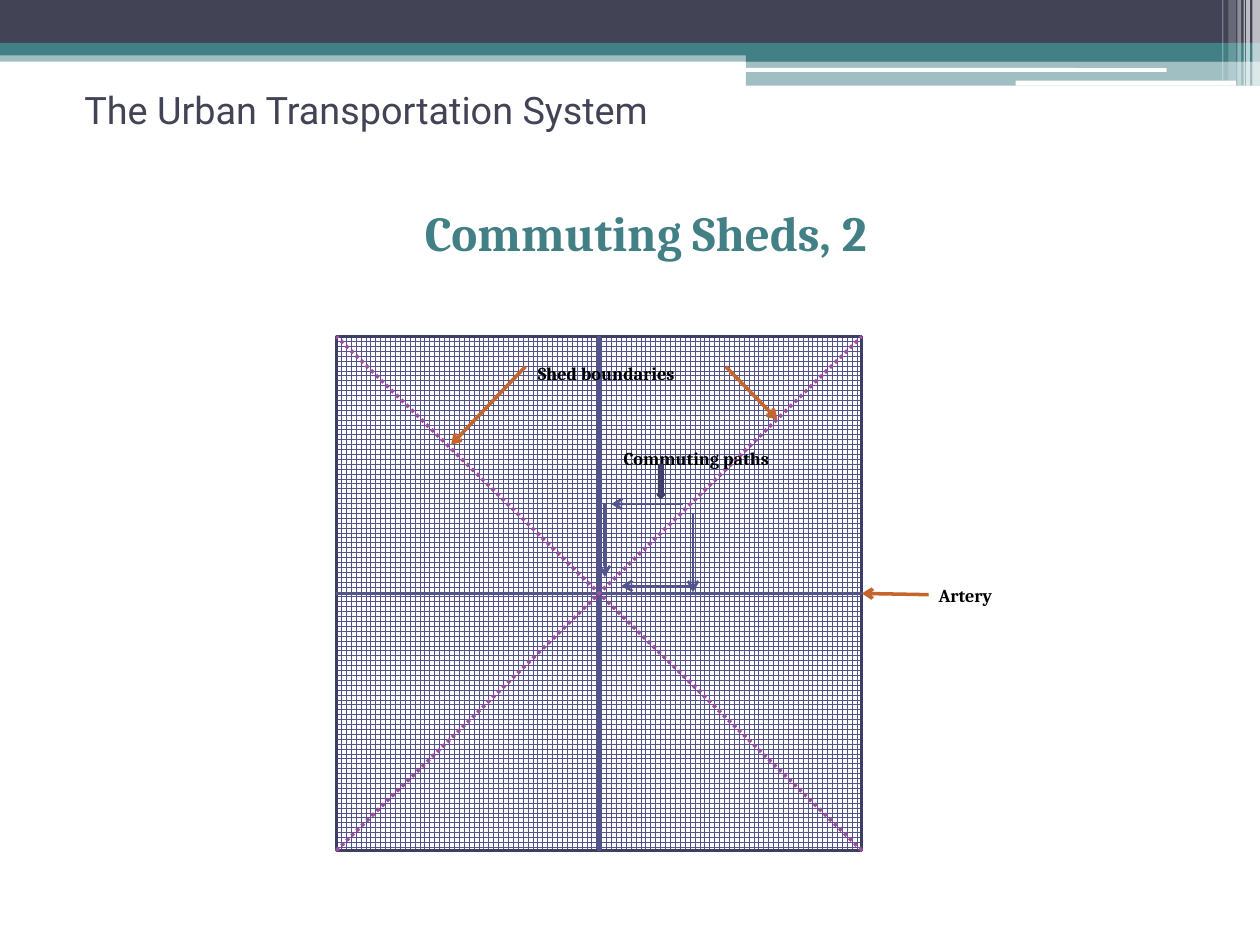
from pptx import Presentation
from pptx.dml.color import RGBColor
from pptx.enum.dml import MSO_LINE, MSO_PATTERN
from pptx.enum.shapes import MSO_CONNECTOR, MSO_SHAPE
from pptx.enum.text import MSO_ANCHOR, MSO_AUTO_SIZE, PP_ALIGN
from pptx.oxml.ns import qn
from pptx.util import Inches, Pt
from lxml import etree

RECT, ROUND, DOWN = MSO_SHAPE.RECTANGLE, MSO_SHAPE.ROUNDED_RECTANGLE, MSO_SHAPE.DOWN_ARROW
TOP, LEFT, BOTTOM, RIGHT = range(4)
SLATE, TEAL, WHITE, BLACK = "424456", "438086", "FFFFFF", "000000"
INDIGO, NAVY, PURPLE, ORANGE = "53548A", "3D3E66", "A04DA3", "C4652D"

# Header: kind, (left, top, width, height), colour, opacity in percent
HEADER = [
    (RECT, (0, 0.4, 10, 0.09), TEAL, 50),
    (RECT, (0, 0, 10, 0.34), SLATE, 100),
    (RECT, (0, 0.34, 10, 0.1), TEAL, 100),
    (RECT, (5.92, 0.39, 4.08, 0.1), TEAL, 100),
    (RECT, (5.92, 0.48, 4.08, 0.2), TEAL, 50),
    (ROUND, (5.91, 0.54, 3.35, 0.03), WHITE, 100),
    (ROUND, (8.06, 0.64, 1.75, 0.04), WHITE, 100),
]
# Header stripes: left, width, height, opacity
STRIPES = [
    (9.94, 0.06, 0.68, 65), (9.89, 0.03, 0.68, 65), (9.87, 0.01, 0.68, 60),
    (9.82, 0.03, 0.68, 40), (9.75, 0.06, 0.64, 20), (9.7, 0.01, 0.64, 30),
]
HEADER += [(RECT, (x, 0, w, h), WHITE, a) for x, w, h, a in STRIPES]

CITY = (2.67, 2.67, 4.17, 4.08)
LABELS = [
    ("Shed boundaries", (4.17, 2.66, 1.83, 0.5)),
    ("Commuting paths", (4.85, 3.33, 1.82, 0.4)),
    ("Artery", (7.35, 4.42, 1.82, 0.4)),
]
PATHS = [
    ((5.42, 4), (4.85, 4)), ((4.8, 4), (4.8, 4.58)),
    ((5.5, 4.08), (5.5, 4.7)), ((5.5, 4.65), (4.93, 4.65)),
]
POINTERS = [((4.17, 2.91), (3.58, 3.53)), ((5.76, 2.91), (6.17, 3.33))]


def rgb(value):
    return RGBColor.from_string(value)


def add_block(parent, kind, box, color, opacity=100):
    sp = parent.add_shape(kind, *map(Inches, box))
    sp.shadow.inherit = False
    sp.fill.solid()
    sp.fill.fore_color.rgb = rgb(color)
    sp.line.fill.background()
    if opacity < 100:
        clr = sp.fill._xPr.find(qn("a:solidFill"))[0]
        etree.SubElement(clr, qn("a:alpha")).set("val", str(opacity * 1000))
    return sp


def outline(sp):
    sp.line.color.rgb = rgb(NAVY)
    sp.line.width = Pt(1.5)


def add_line(parent, start, end, color, width, arrow=False, dash=None):
    c = parent.add_connector(MSO_CONNECTOR.STRAIGHT, *map(Inches, (*start, *end)))
    c.line.color.rgb = rgb(color)
    c.line.width = Pt(width)
    if dash:
        c.line.dash_style = dash
    if arrow:
        etree.SubElement(c.line._get_or_add_ln(), qn("a:tailEnd")).set("type", "arrow")
    etree.SubElement(c._element.spPr, qn("a:effectLst"))
    return c


def add_run(p, text, size, font, color, bold=False):
    r = p.add_run()
    r.text = text
    r.font.size, r.font.name, r.font.bold = Pt(size), font, bold
    r.font.color.rgb = rgb(color)
    return r


def place(sp, box):
    sp.left, sp.top, sp.width, sp.height = map(Inches, box)


def add_text(s):
    title, body = s.shapes.title, s.placeholders[1]
    place(title, (0.5, 0.69, 9, 0.58))
    tf = title.text_frame
    tf.vertical_anchor = MSO_ANCHOR.TOP
    tf.margin_top, tf.margin_left = 0, Inches(0.17)
    p = tf.paragraphs[0]
    p.alignment = PP_ALIGN.LEFT
    add_run(p, "The Urban Transportation System", 21.6, "Roboto", SLATE)

    place(body, (0.5, 1.56, 9, 5.86))
    p = body.text_frame.paragraphs[0]
    p.level, p.alignment, p.space_before = 1, PP_ALIGN.CENTER, Pt(0)
    pPr = p._p.get_or_add_pPr()
    pPr.set("marL", str(Inches(0.25)))
    pPr.set("indent", "0")
    etree.SubElement(pPr, qn("a:buNone"))
    add_run(p, "Commuting Sheds, 2", 28, "Cambria", TEAL, True)


def add_label(parent, text, box):
    tb = parent.add_textbox(*map(Inches, box))
    tf = tb.text_frame
    tf.word_wrap = True
    tf.auto_size = MSO_AUTO_SIZE.SHAPE_TO_FIT_TEXT
    r = add_run(tf.paragraphs[0], text, 18, "Cambria", BLACK, True)
    r._r.get_or_add_rPr().set("baseline", "-25000")


def add_diagram(s):
    g = s.shapes.add_group_shape().shapes
    x, y, w, h = CITY
    right, bottom, mid_x, mid_y = x + w, y + h, x + w / 2, y + h / 2

    # Street grid
    city = add_block(g, RECT, CITY, WHITE)
    city.fill.patterned()
    city.fill.pattern = MSO_PATTERN.LARGE_GRID
    city.fill.fore_color.rgb, city.fill.back_color.rgb = rgb(INDIGO), rgb(WHITE)
    outline(city)

    # Arteries, joined to the sides of the grid
    for start, end, a, b in [((mid_x, y), (mid_x, bottom), TOP, BOTTOM),
                             ((right, mid_y), (x, mid_y), RIGHT, LEFT)]:
        c = add_line(g, start, end, INDIGO, 2)
        c.begin_connect(city, a)
        c.end_connect(city, b)

    # Shed boundaries along the diagonals
    for start, end in [((x, bottom), (right, y)), ((right, bottom), (x, y))]:
        add_line(g, start, end, PURPLE, 2, dash=MSO_LINE.ROUND_DOT)

    for text, box in LABELS:
        add_label(g, text, box)

    # Commuting paths and their marker
    for start, end in PATHS:
        add_line(g, start, end, INDIGO, 1.5, arrow=True)
    outline(add_block(g, DOWN, (5.22, 3.69, 0.05, 0.26), INDIGO))

    # Pointers from the labels
    for start, end in POINTERS:
        add_line(g, start, end, ORANGE, 2, arrow=True)
    c = add_line(g, (7.37, 4.72), (right, mid_y), ORANGE, 2, arrow=True)
    c.end_connect(city, RIGHT)


def main():
    prs = Presentation()
    prs.slide_width, prs.slide_height = Inches(10), Inches(7.5)
    s = prs.slides.add_slide(prs.slide_layouts[1])
    for part in HEADER:
        add_block(s.shapes, *part)
    add_text(s)
    add_diagram(s)
    prs.save("out.pptx")


if __name__ == "__main__":
    main()
